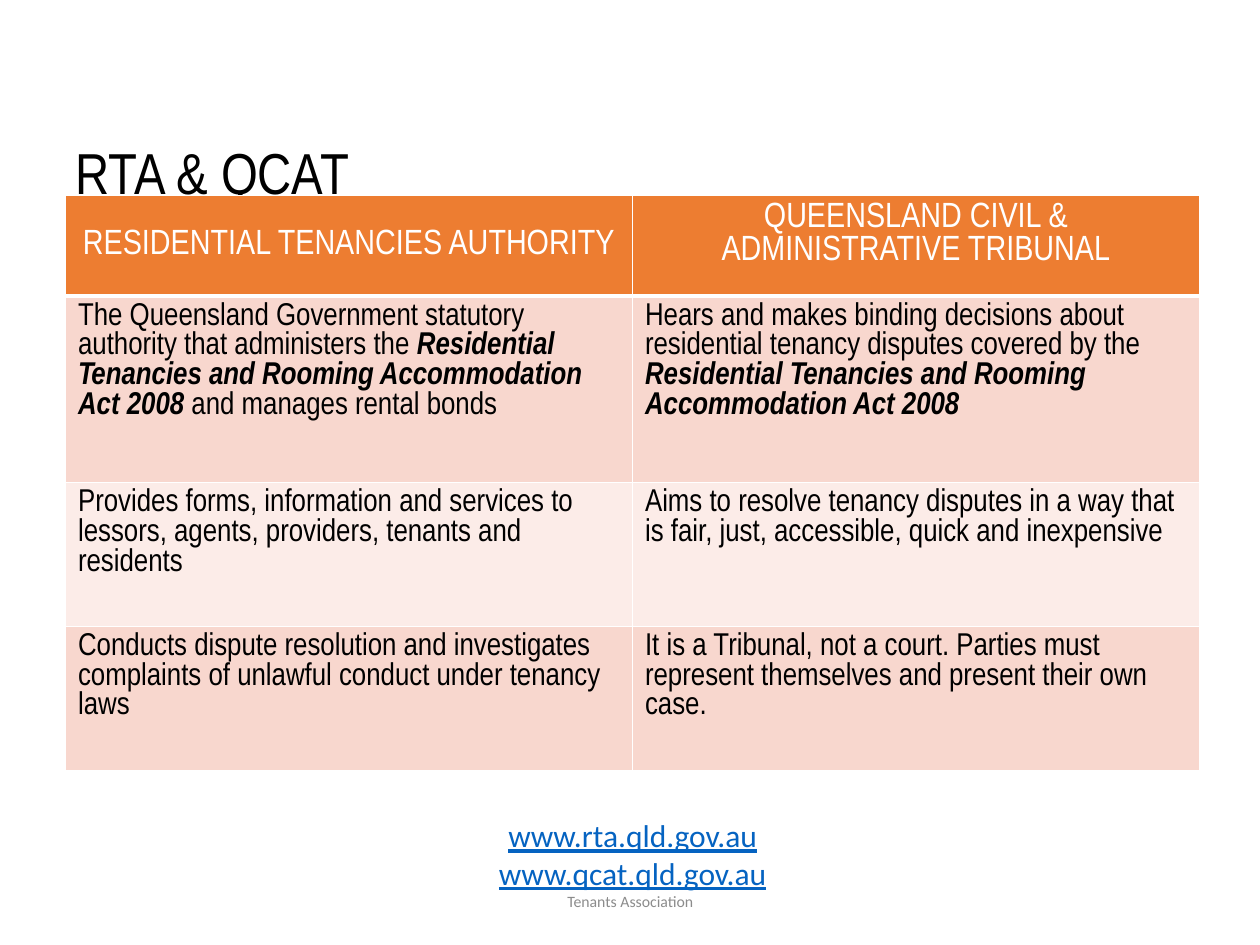
"""Build a slide that compares the tenancy authority with the tribunal."""
import pptx
import pptx.dml.color
import pptx.enum.text
import pptx.oxml
import pptx.oxml.ns
import pptx.util

Cm = pptx.util.Cm
ANCHOR = pptx.enum.text.MSO_ANCHOR
ALIGN = pptx.enum.text.PP_ALIGN

COLORS = {
    "text": "000000",
    "white": "FFFFFF",
    "header": "ED7D31",
    "band_dark": "F8D7CE",
    "band_light": "FCECE8",
    "link": "0563C1",
    "footer": "8C8C8C",
}

ACT = "Residential Tenancies and Rooming Accommodation Act 2008"
HEADERS = [
    ("RESIDENTIAL TENANCIES AUTHORITY", ANCHOR.MIDDLE),
    ("QUEENSLAND CIVIL & ADMINISTRATIVE TRIBUNAL", ANCHOR.TOP),
]
ROWS = [
    (
        ["The Queensland Government statutory authority that administers the ",
         ACT, " and manages rental bonds"],
        ["Hears and makes binding decisions about residential tenancy disputes covered by the ",
         ACT],
    ),
    (
        ["Provides forms, information and services to lessors, agents, providers, "
         "tenants and residents"],
        ["Aims to resolve tenancy disputes in a way that is fair, just, accessible, "
         "quick and inexpensive"],
    ),
    (
        ["Conducts dispute resolution and investigates complaints of unlawful conduct "
         "under tenancy laws"],
        ["It is a Tribunal, not a court. Parties must represent themselves and present "
         "their own case."],
    ),
]

TABLE_BOX = (1.32, 3.94, 22.86, 11.59)
ROW_HEIGHTS = [2.03, 3.76, 2.9, 2.9]

FORMATS = {
    "title": {"name": "Arial Narrow", "size": 33, "color": "text"},
    "header": {"name": "Arial Narrow", "size": 20, "color": "white", "bold": False},
    "body": {"name": "Arial Narrow", "size": 18, "color": "text", "bold": False},
    "act": {"name": "Arial Narrow", "size": 18, "color": "text", "bold": True, "italic": True},
    "link": {"name": "Calibri", "size": 18, "color": "link", "underline": True},
    "footer": {"name": "Calibri", "size": 9, "color": "footer"},
}

TEXT_BOXES = [
    {"box": (1.27, 1.68, 17.63, 3.73), "lines": ["RTA & QCAT"], "format": "title",
     "anchor": ANCHOR.MIDDLE, "paragraph": {"alignment": ALIGN.LEFT, "line_spacing": 0.9}},
    {"box": (7.75, 16.33, 10.01, 2.57), "lines": ["www.rta.qld.gov.au", "www.qcat.qld.gov.au"],
     "format": "link", "anchor": ANCHOR.TOP, "paragraph": {"alignment": ALIGN.CENTER}},
    {"box": (8.41, 17.65, 8.59, 1.02), "lines": ["Tenants Association"], "format": "footer",
     "anchor": ANCHOR.MIDDLE, "paragraph": {"alignment": ALIGN.CENTER}},
]


def rgb(color):
    return pptx.dml.color.RGBColor.from_string(COLORS[color])


def add_run(paragraph, text, format_name):
    run = paragraph.add_run()
    run.text = text
    for attribute, value in FORMATS[format_name].items():
        if attribute == "color":
            run.font.color.rgb = rgb(value)
        else:
            setattr(run.font, attribute, pptx.util.Pt(value) if attribute == "size" else value)


def add_text(slide, item):
    frame = slide.shapes.add_textbox(*map(Cm, item["box"])).text_frame
    frame.word_wrap = True
    frame.vertical_anchor = item["anchor"]
    for index, line in enumerate(item["lines"]):
        paragraph = frame.add_paragraph() if index else frame.paragraphs[0]
        for attribute, value in item["paragraph"].items():
            setattr(paragraph, attribute, value)
        add_run(paragraph, line, item["format"])


def style_cell(cell, fill, bottom_width):
    properties = cell._tc.get_or_add_tcPr()
    for side, width in {"L": 1, "R": 1, "T": 1, "B": bottom_width}.items():
        properties.append(pptx.oxml.parse_xml(
            f'<a:ln{side} {pptx.oxml.ns.nsdecls("a")} w="{pptx.util.Pt(width)}">'
            f'<a:solidFill><a:srgbClr val="{COLORS["white"]}"/></a:solidFill></a:ln{side}>'))
    cell.fill.solid()
    cell.fill.fore_color.rgb = rgb(fill)


def add_comparison(slide):
    table = slide.shapes.add_table(
        len(ROWS) + 1, len(HEADERS), *map(Cm, TABLE_BOX)).table
    for row, height in zip(table.rows, ROW_HEIGHTS):
        row.height = Cm(height)
    for column, (text, anchor) in enumerate(HEADERS):
        cell = table.cell(0, column)
        style_cell(cell, "header", 3)
        cell.vertical_anchor = anchor
        paragraph = cell.text_frame.paragraphs[0]
        paragraph.alignment = ALIGN.CENTER
        add_run(paragraph, text, "header")
    for row, contents in enumerate(ROWS, start=1):
        for column, parts in enumerate(contents):
            cell = table.cell(row, column)
            style_cell(cell, "band_dark" if row % 2 else "band_light", 1)
            for part in parts:
                add_run(cell.text_frame.paragraphs[0], part, "act" if part == ACT else "body")


def main():
    presentation = pptx.Presentation()
    presentation.slide_width = Cm(25.4)
    presentation.slide_height = Cm(19.05)
    slide = presentation.slides.add_slide(presentation.slide_layouts[6])
    title, *closing_texts = TEXT_BOXES
    add_text(slide, title)
    add_comparison(slide)
    for item in closing_texts:
        add_text(slide, item)
    presentation.save("out.pptx")


if __name__ == "__main__":
    main()
